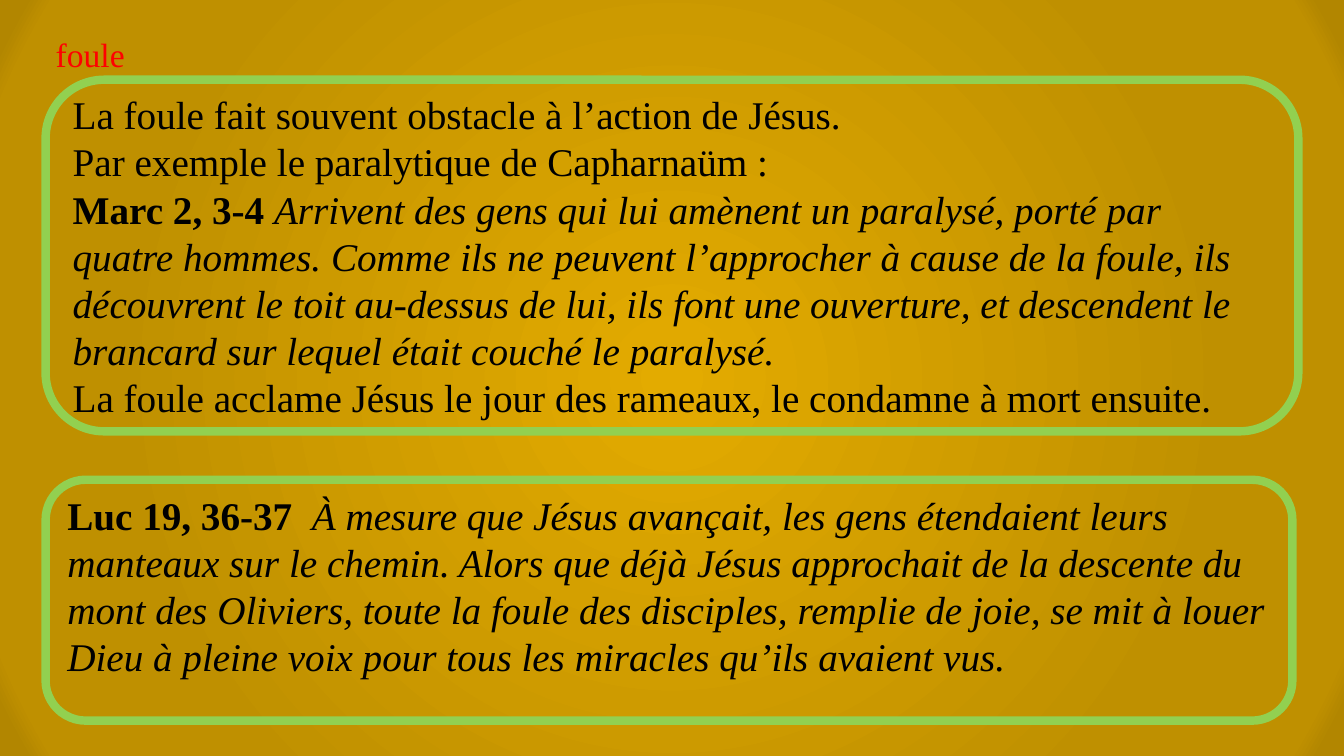
from lxml.etree import SubElement
from pptx import Presentation
from pptx.dml.color import RGBColor
from pptx.enum.shapes import MSO_SHAPE
from pptx.enum.text import MSO_ANCHOR, MSO_AUTO_SIZE, PP_ALIGN
from pptx.oxml.ns import qn
from pptx.util import Cm, Pt

COLORS = {
    "text": "000000", "heading": "FF0000", "frame": "92D050",
    "glow": "E3AB00", "gold": "BF9000", "edge": "B28600",
}
SERIF = "Times New Roman"


def add_text(paragraph, text, size=28, color="text", bold=False, italic=False):
    run = paragraph.add_run()
    run.text = text
    run.font.name = SERIF
    run.font.size = Pt(size)
    run.font.bold = bold
    run.font.italic = italic
    run.font.color.rgb = RGBColor.from_string(COLORS[color])


class VerseSlide:
    """Holds the slide and the style of its elements."""

    frame_width = Pt(6)

    def __init__(self, presentation):
        self.slide = presentation.slides.add_slide(presentation.slide_layouts[5])

    def background(self, stops):
        """Circular gradient; each stop is (percent, colour, opacity)."""
        self.slide.background.fill.gradient()
        gradient = next(self.slide.element.iter(qn("a:gradFill")))
        for child in list(gradient):
            gradient.remove(child)
        stop_list = SubElement(gradient, qn("a:gsLst"))
        for percent, color, opacity in stops:
            stop = SubElement(stop_list, qn("a:gs"), pos=str(percent * 1000))
            tint = SubElement(stop, qn("a:srgbClr"), val=COLORS[color])
            if opacity < 100:
                SubElement(tint, qn("a:alpha"), val=str(opacity * 1000))
        circle = SubElement(gradient, qn("a:path"), path="circle")
        SubElement(circle, qn("a:fillToRect"), dict.fromkeys("ltrb", "50000"))

    def title(self, text, left, top, width, height):
        heading = self.slide.shapes.title
        heading.left, heading.top, heading.width, heading.height = map(
            Cm, (left, top, width, height))
        frame = heading.text_frame
        frame.auto_size = MSO_AUTO_SIZE.NONE
        frame.vertical_anchor = MSO_ANCHOR.TOP
        frame.word_wrap = False
        frame.paragraphs[0].alignment = PP_ALIGN.LEFT
        add_text(frame.paragraphs[0], text, size=24, color="heading")

    def verse_box(self, paragraphs, left, top, width, height, bottom_inset=0.13):
        """Rounded frame; each paragraph is a list of (text, format) runs."""
        box = self.slide.shapes.add_shape(
            MSO_SHAPE.ROUNDED_RECTANGLE, *map(Cm, (left, top, width, height)))
        box.shadow.inherit = False
        box.fill.background()
        box.line.color.rgb = RGBColor.from_string(COLORS["frame"])
        box.line.width = self.frame_width
        frame = box.text_frame
        frame.word_wrap = True
        frame.vertical_anchor = MSO_ANCHOR.MIDDLE
        frame.margin_bottom = Cm(bottom_inset)
        for index, runs in enumerate(paragraphs):
            paragraph = frame.add_paragraph() if index else frame.paragraphs[0]
            paragraph.alignment = PP_ALIGN.LEFT
            for text, style in runs:
                add_text(paragraph, text, **style)


def main():
    presentation = Presentation()
    presentation.slide_width, presentation.slide_height = Cm(33.87), Cm(19.05)
    crowd = VerseSlide(presentation)
    crowd.background([(0, "glow", 100), (73, "gold", 36), (94, "gold", 100), (97, "edge", 100)])

    # Heading
    crowd.title("foule", 1.15, 0.72, 2.39, 1.27)

    plain, reference, quote = {}, {"bold": True}, {"italic": True}

    # The crowd as an obstacle
    crowd.verse_box([
        [("La foule fait souvent obstacle à l’action de Jésus.", plain)],
        [("Par exemple le paralytique de Capharnaüm :", plain)],
        [("Marc 2, 3-4 ", reference),
         ("Arrivent des gens qui lui amènent un paralysé, porté par quatre hommes. "
          "Comme ils ne peuvent l’approcher à cause de la foule, ils découvrent le toit "
          "au-dessus de lui, ils font une ouverture, et descendent le brancard sur lequel "
          "était couché le paralysé.", quote)],
        [("La foule acclame Jésus le jour des rameaux, le condamne à mort ensuite.", plain)],
    ], 1.15, 2.01, 31.57, 8.86)

    # The crowd in joy
    crowd.verse_box([
        [("Luc 19, 36-37 ", reference),
         (" À mesure que Jésus avançait, les gens étendaient leurs manteaux sur le chemin. "
          "Alors que déjà Jésus approchait de la descente du mont des Oliviers, toute la "
          "foule des disciples, remplie de joie, se mit à louer Dieu à pleine voix pour tous "
          "les miracles qu’ils avaient vus.", quote)],
    ], 1.15, 12.09, 31.42, 6.07, bottom_inset=0.86)

    presentation.save("out.pptx")


if __name__ == "__main__":
    main()
